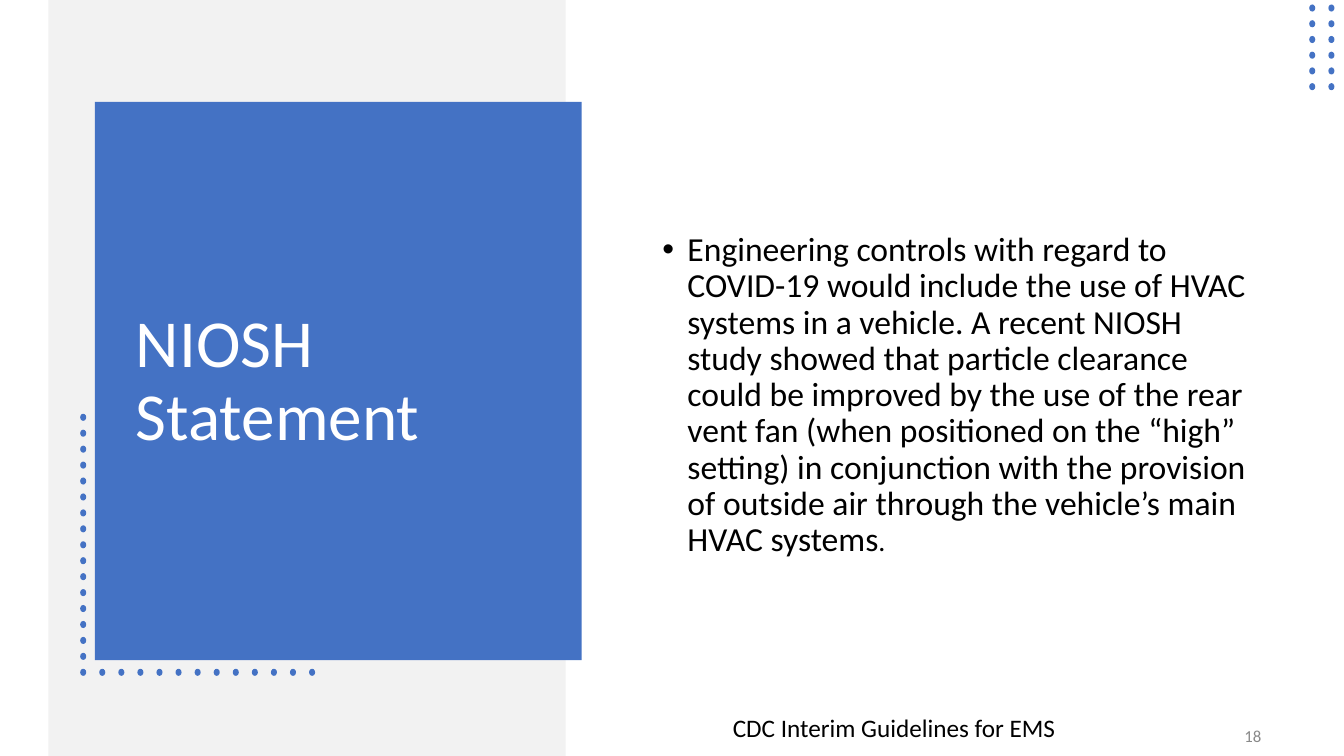
from lxml import etree
from pptx import Presentation
from pptx.dml.color import RGBColor
from pptx.enum.shapes import MSO_SHAPE
from pptx.enum.text import MSO_ANCHOR, PP_ALIGN
from pptx.oxml.ns import qn
from pptx.util import Inches, Pt

RECT, OVAL = MSO_SHAPE.RECTANGLE, MSO_SHAPE.OVAL
TOP, MIDDLE = MSO_ANCHOR.TOP, MSO_ANCHOR.MIDDLE
LEFT, RIGHT = PP_ALIGN.LEFT, PP_ALIGN.RIGHT
BLUE = RGBColor(0x44, 0x72, 0xC4)
PALE = RGBColor(0xF2, 0xF2, 0xF2)
GREY = RGBColor(0x89, 0x89, 0x89)
WHITE = RGBColor(0xFF, 0xFF, 0xFF)
BLACK = RGBColor(0, 0, 0)
FONT = "Calibri"
DOT_W, DOT_H = 0.07, 0.06

STATEMENT = (
    "Engineering controls with regard to COVID-19 would include the use of HVAC "
    "systems in a vehicle. A recent NIOSH study showed that particle clearance "
    "could be improved by the use of the rear vent fan (when positioned on the "
    "“high” setting) in conjunction with the provision of outside air through "
    "the vehicle’s main HVAC systems"
)


def add_filled(shapes, kind, box, color):
    """Add a borderless shape in one flat colour."""
    sp = shapes.add_shape(kind, *map(Inches, box))
    sp.shadow.inherit = False
    sp.fill.solid()
    sp.fill.fore_color.rgb = color
    sp.line.fill.background()
    return sp


def add_dots(s, centres):
    """Add a group of dots whose top left corners are given."""
    group = s.shapes.add_group_shape()
    for left, top in centres:
        sp = add_filled(group.shapes, OVAL, (left, top, DOT_W, DOT_H), BLUE)
        sp.rotation = 90


def spread(first, last, count):
    """Return evenly spaced positions from first to last."""
    return [first + (last - first) * i / (count - 1) for i in range(count)]


def add_bullet(p, indent):
    """Give a paragraph a round bullet with a hanging indent."""
    pPr = p._p.get_or_add_pPr()
    pPr.set("marL", str(Inches(indent)))
    pPr.set("indent", str(-Inches(indent)))
    etree.SubElement(pPr, qn("a:buFont")).set("typeface", "Arial")
    etree.SubElement(pPr, qn("a:buChar")).set("char", "•")


def add_text(s, box, runs, color=BLACK, anchor=TOP, align=LEFT, wrap=True,
             line=None, after=None, bullet=None):
    """Add a one-paragraph text box from (text, size) runs."""
    tf = s.shapes.add_textbox(*map(Inches, box)).text_frame
    tf.word_wrap = wrap
    tf.vertical_anchor = anchor
    p = tf.paragraphs[0]
    p.alignment = align
    if line:
        p.line_spacing = line
    if after:
        p.space_after = Pt(after)
    if bullet:
        add_bullet(p, bullet)
    for text, size in runs:
        r = p.add_run()
        r.text = text
        r.font.name = FONT
        r.font.size = Pt(size)
        r.font.color.rgb = color


def main():
    """Build the slide and save it."""
    prs = Presentation()
    prs.slide_width, prs.slide_height = Inches(13.33), Inches(7.5)
    s = prs.slides.add_slide(prs.slide_layouts[6])

    add_filled(s.shapes, RECT, (0.48, 0, 5.13, 7.5), PALE)
    add_filled(s.shapes, RECT, (0.94, 1.01, 4.83, 5.54), BLUE)

    column = [(0.79, y) for y in spread(4.11, 6.64, 17)]
    row = [(x, 6.64) for x in spread(0.79, 3.06, 13)]
    add_dots(s, column + row[1:])
    add_text(s, (1.25, 1.45, 4.14, 4.68), [("NIOSH Statement", 48)],
             color=WHITE, anchor=MIDDLE, line=0.9)

    add_dots(s, [(x, y) for y in spread(0.05, 0.83, 6) for x in (12.98, 13.17)])
    add_text(s, (6.47, 1.3, 6.08, 5.25), [(STATEMENT, 24), (".", 20)],
             anchor=MIDDLE, line=0.9, bullet=0.25)

    add_text(s, (9.61, 7.1, 3, 0.4), [("18", 12)],
             color=GREY, anchor=MIDDLE, align=RIGHT, after=6)
    add_text(s, (7.17, 7.02, 3.44, 0.4), [("CDC Interim Guidelines for EMS", 18)],
             wrap=False, after=6)
    prs.save("out.pptx")


if __name__ == "__main__":
    main()
